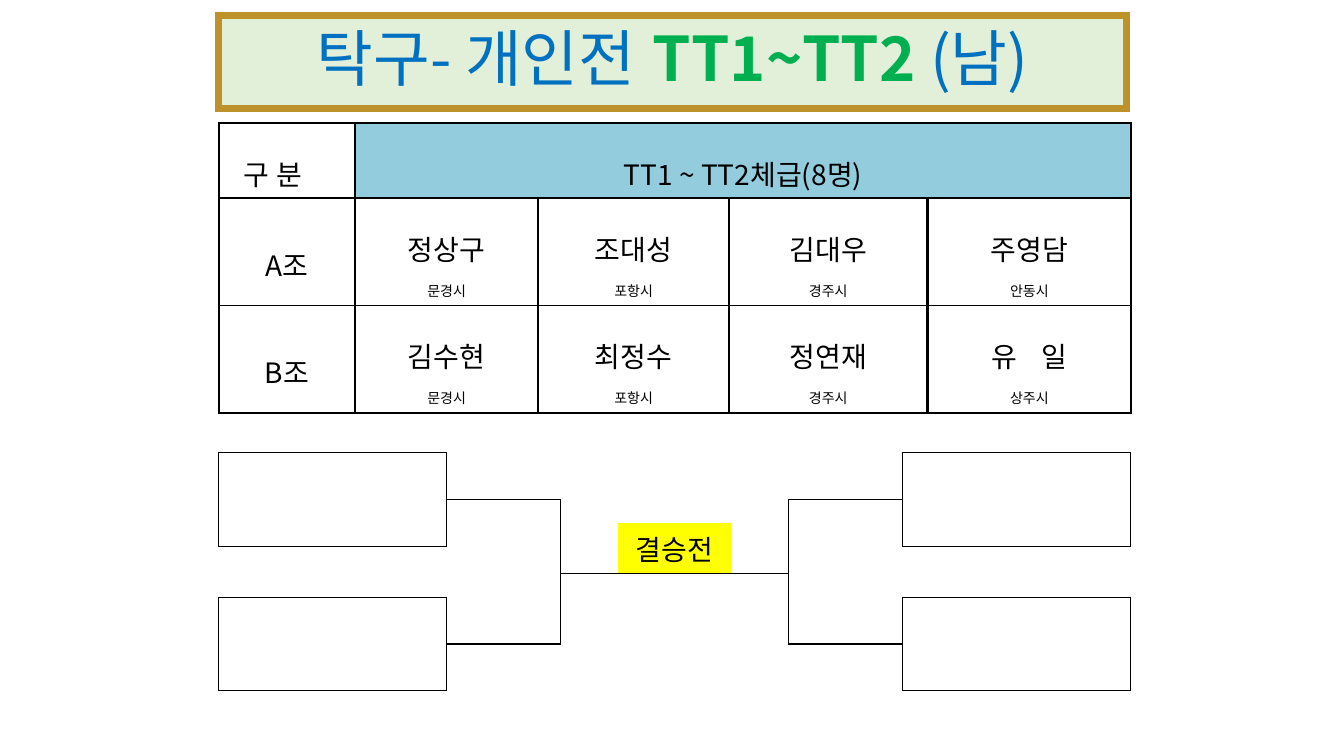
from lxml import etree
from pptx import Presentation
from pptx.dml.color import RGBColor
from pptx.enum import lang, text
from pptx.oxml.ns import qn
from pptx.util import Inches, Pt

TITLE = [("탁구- 개인전 ", "blue", False), ("TT1~TT2 ", "green", True), ("(남)", "blue", False)]
HEADER = ["구 분　", "TT1 ~ TT2체급(8명)"]
GROUPS = [
    ("A조", [("정상구", "문경시"), ("조대성", "포항시"), ("김대우", "경주시"), ("주영담", "안동시")]),
    ("B조", [("김수현", "문경시"), ("최정수", "포항시"), ("정연재", "경주시"), ("유   일", "상주시")]),
]
FINAL = "결승전"

THEME = {
    "font": "Noto Sans CJK KR",
    "blue": "0070C0", "green": "00B050", "black": "000000",
    "title_fill": "E2F0D9", "title_line": "BD922A",
    "header_fill": "93CDDD", "final_fill": "FFFF00",
    "title_size": 44, "name_size": 20, "city_size": 10, "empty_size": 1,
    "title_border": 5, "thick": 1.7, "thin": 0.56, "bracket": 1,
}
NO_STYLE = "{2D5ABB26-0587-4C30-8999-92F81FD0307C}"
SIDES = "LRTB"
LEFT, WIDTH = 2.17, 9.06
GROUP_TOP, GROUP_HEIGHT = 1.22, 2.35
GROUP_COLUMNS = [1.35, 1.82, 1.89, 1.97, 2.02]
GROUP_ROWS = [0.63, 0.66, 0.66]
BRACKET_TOP, BRACKET_HEIGHT, BRACKET_ROWS = 4.26, 2.79, 12
BRACKET_COLUMNS = [1.13] * 3 + [1.13 / 2] * 4 + [1.13] * 3
# Bracket cells: first row, first column; every player box has the same span.
BOX_ROWS, BOX_COLUMNS = 4, 2
BOXES = [(row, column) for row in (1, 7) for column in (0, 8)]
SEMI_ROWS, FINAL_ROW = (2, 8), 5


def color(name):
    return RGBColor.from_string(THEME[name])


def add_span(para, words, size, color_name="black", bold=False):
    """Add a run, naming the typeface for Korean as well as Latin text."""
    span = para.add_run()
    span.text = words
    font = span.font
    font.name, font.size, font.bold = THEME["font"], Pt(THEME[size]), bold
    font.color.rgb = color(color_name)
    font.language_id = lang.MSO_LANGUAGE_ID.KOREAN
    etree.SubElement(span._r.get_or_add_rPr(), qn("a:ea"), typeface=THEME["font"])


def write(cell, lines, spacing=None):
    """Fill a cell with centred (text, size name) paragraphs."""
    frame = cell.text_frame
    for index, (words, size) in enumerate(lines):
        para = frame.add_paragraph() if index else frame.paragraphs[0]
        para.alignment, para.line_spacing = text.PP_ALIGN.CENTER, spacing
        add_span(para, words, size)


def border(cell, **widths):
    """Draw the given sides (L, R, T, B, each a width name); others stay as they are."""
    properties = cell._tc.get_or_add_tcPr()
    if properties.find(qn("a:lnL")) is None:
        for position, side in enumerate(SIDES):
            line = etree.Element(qn("a:ln" + side))
            etree.SubElement(line, qn("a:noFill"))
            properties.insert(position, line)
    for side, width in widths.items():
        line = properties.find(qn("a:ln" + side))
        line.set("w", str(Pt(THEME[width])))
        line.remove(line[0])
        fill = etree.SubElement(line, qn("a:solidFill"))
        etree.SubElement(fill, qn("a:srgbClr"), val=THEME["black"])


def paint(cell, color_name):
    cell.fill.solid()
    cell.fill.fore_color.rgb = color(color_name)


def add_plain_table(slide, top, height, columns, rows):
    frame = slide.shapes.add_table(len(rows), len(columns), Inches(LEFT), Inches(top),
                                   Inches(WIDTH), Inches(height))
    table = frame.table
    table.first_row = table.horz_banding = False
    next(frame._element.iter(qn("a:tableStyleId"))).text = NO_STYLE
    for column, width in zip(table.columns, columns):
        column.width = Inches(width)
    for row, row_height in zip(table.rows, rows):
        row.height = Inches(row_height)
    frame.width, frame.height = Inches(WIDTH), Inches(height)
    return table


def add_title(slide):
    box = slide.shapes.title
    box.left, box.top, box.width, box.height = map(Inches, (2.17, 0.15, 9, 0.93))
    box.fill.solid()
    box.fill.fore_color.rgb = color("title_fill")
    box.line.color.rgb = color("title_line")
    box.line.width = Pt(THEME["title_border"])
    etree.SubElement(box._element.spPr.find(qn("a:ln")), qn("a:miter"), lim="800000")
    box.text_frame.auto_size = text.MSO_AUTO_SIZE.NONE
    box.text_frame.vertical_anchor = text.MSO_ANCHOR.MIDDLE
    para = box.text_frame.paragraphs[0]
    para.alignment, para.line_spacing = text.PP_ALIGN.CENTER, 0.9
    for words, color_name, bold in TITLE:
        add_span(para, words, "title_size", color_name, bold)


def add_groups(slide):
    table = add_plain_table(slide, GROUP_TOP, GROUP_HEIGHT, GROUP_COLUMNS, GROUP_ROWS)
    for row in range(len(GROUP_ROWS)):
        for column in range(len(GROUP_COLUMNS)):
            cell = table.cell(row, column)
            cell.vertical_anchor = text.MSO_ANCHOR.MIDDLE
            border(cell, L="thick", R="thick", T="thin" if row == 2 else "thick",
                   B="thin" if row == 1 else "thick")
    table.cell(0, 1).merge(table.cell(0, len(GROUP_COLUMNS) - 1))
    paint(table.cell(0, 1), "header_fill")
    for column, label in enumerate(HEADER):
        write(table.cell(0, column), [(label, "name_size")], 1.6)
    for row, (group, players) in enumerate(GROUPS, 1):
        write(table.cell(row, 0), [(group, "name_size")], 1.6)
        for column, (name, city) in enumerate(players, 1):
            write(table.cell(row, column), [(name, "name_size"), (city, "city_size")], 1.6)


def add_bracket(slide):
    table = add_plain_table(slide, BRACKET_TOP, BRACKET_HEIGHT, BRACKET_COLUMNS,
                            [BRACKET_HEIGHT / BRACKET_ROWS] * BRACKET_ROWS)
    final = table.cell(FINAL_ROW - 1, 4)
    write(final, [(FINAL, "name_size")])
    paint(final, "final_fill")
    for cell in table.iter_cells():
        border(cell)
        if not cell.text:
            cell.margin_top = cell.margin_bottom = 0
            etree.SubElement(cell.text_frame.paragraphs[0]._p, qn("a:endParaRPr"),
                             sz=str(THEME["empty_size"] * 100))

    def rule_below(row, columns):
        for column in columns:
            border(table.cell(row, column), B="bracket")
            border(table.cell(row + 1, column), T="bracket")

    def rule_right(column, rows):
        for row in rows:
            border(table.cell(row, column), R="bracket")
            border(table.cell(row, column + 1), L="bracket")

    for row, column in BOXES:
        columns = range(column, column + BOX_COLUMNS)
        rule_below(row - 1, columns)
        rule_below(row + BOX_ROWS - 1, columns)
        rule_right(1 if column == 0 else 7, range(row, row + BOX_ROWS))
        corner = table.cell(row, column)
        border(corner, **dict.fromkeys(SIDES, "bracket"))
        corner.merge(table.cell(row + BOX_ROWS - 1, column + BOX_COLUMNS - 1))
    for row in SEMI_ROWS:
        rule_below(row, (2, 7))
    for column in (2, 6):
        rule_right(column, range(SEMI_ROWS[0] + 1, SEMI_ROWS[1] + 1))
    rule_below(FINAL_ROW, range(3, 7))
    border(final, B="bracket")
    # The middle columns pair up in every row the final does not take.
    for row in range(BRACKET_ROWS):
        if row not in (FINAL_ROW - 1, FINAL_ROW):
            for column in (3, 5):
                pair = table.cell(row, column), table.cell(row, column + 1)
                if column == 5 and SEMI_ROWS[0] < row <= SEMI_ROWS[1]:
                    border(pair[0], R="bracket")
                pair[0].merge(pair[1])
    final.merge(table.cell(FINAL_ROW, 5))


def main():
    deck = Presentation()
    deck.slide_width, deck.slide_height = Inches(13.33), Inches(7.5)
    slide = deck.slides.add_slide(deck.slide_layouts[5])
    add_title(slide)
    add_groups(slide)
    add_bracket(slide)
    deck.save("out.pptx")


if __name__ == "__main__":
    main()
